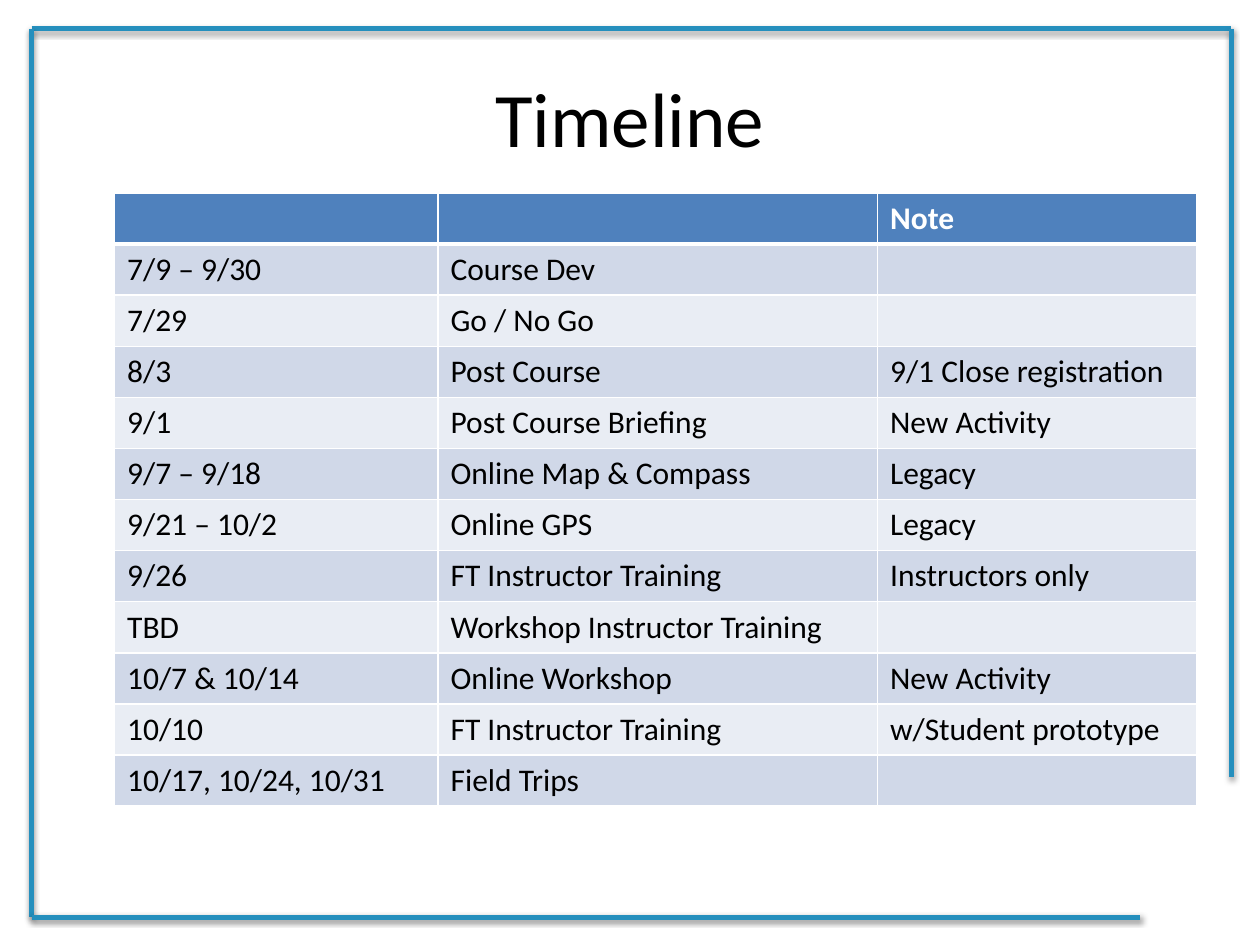
"""Build the course timeline slide."""
import pptx
import pptx.util
import pptx.dml.color
import pptx.enum.shapes
import pptx.enum.text
import pptx.oxml
import pptx.oxml.ns

Cm, Pt = pptx.util.Cm, pptx.util.Pt

TITLE = "Timeline"
ROWS = [
    ("", "", "Note"),
    ("7/9 – 9/30", "Course Dev", ""),
    ("7/29", "Go / No Go", ""),
    ("8/3", "Post Course", "9/1 Close registration"),
    ("9/1", "Post Course Briefing", "New Activity"),
    ("9/7 – 9/18", "Online Map & Compass", "Legacy"),
    ("9/21 – 10/2", "Online GPS", "Legacy"),
    ("9/26", "FT Instructor Training", "Instructors only"),
    ("TBD", "Workshop Instructor Training", ""),
    ("10/7 & 10/14", "Online Workshop", "New Activity"),
    ("10/10", "FT Instructor Training", "w/Student prototype"),
    ("10/17, 10/24, 10/31", "Field Trips", ""),
]
COLORS = {"frame": "258FBD", "head": "4F81BD", "odd": "D0D8E8",
          "even": "E9EDF4", "white": "FFFFFF", "black": "000000"}
FONT = "Calibri"
LEFT, TOP, RIGHT, BASE = 0.64, 0.58, 24.82, 18.49
FRAME = [
    (LEFT, TOP, RIGHT, TOP),
    (RIGHT, TOP, RIGHT, 15.67),
    (LEFT, TOP, LEFT, BASE),
    (LEFT, BASE, 22.99, BASE),
]
WIDTHS = [6.52, 8.86, 6.44]
HIGH = 1.03
NS = pptx.oxml.ns.nsdecls("a")


def color(name):
    return pptx.dml.color.RGBColor.from_string(COLORS[name])


def style(para, size, name, bold=False):
    font = para.font
    font.name, font.size, font.bold = FONT, Pt(size), bold
    font.color.rgb = color(name)


def draw_edge(shapes, ends):
    kind = pptx.enum.shapes.MSO_CONNECTOR.STRAIGHT
    edge = shapes.add_connector(kind, *map(Cm, ends))
    edge.line.color.rgb = color("frame")
    edge.line.width = Pt(3)
    edge._element.spPr.append(pptx.oxml.parse_xml(
        f'<a:effectLst {NS}><a:outerShdw blurRad="{Pt(3.1)}" '
        f'dist="{Pt(1.6)}" dir="5400000" rotWithShape="0">'
        f'<a:srgbClr val="{COLORS["black"]}"><a:alpha val="38000"/>'
        '</a:srgbClr></a:outerShdw></a:effectLst>'))


def set_lines(cell, row):
    props = cell._tc.get_or_add_tcPr()
    thick = {(0, "B"), (1, "T")}
    for side in "LRTB":
        width = Pt(3 if (row, side) in thick else 1)
        props.append(pptx.oxml.parse_xml(
            f'<a:ln{side} {NS} w="{width}"><a:solidFill>'
            f'<a:srgbClr val="{COLORS["white"]}"/>'
            f'</a:solidFill></a:ln{side}>'))


def fill_cell(cell, row, text):
    head = row == 0
    set_lines(cell, row)
    cell.fill.solid()
    cell.fill.fore_color.rgb = color(
        "head" if head else "odd" if row % 2 else "even")
    cell.text = text
    style(cell.text_frame.paragraphs[0], 18,
          "white" if head else "black", head)


def add_grid(shapes):
    grid = shapes.add_table(len(ROWS), len(WIDTHS), Cm(2.31), Cm(3.89),
                            Cm(sum(WIDTHS)), Cm(HIGH * len(ROWS))).table
    for col, width in zip(grid.columns, WIDTHS):
        col.width = Cm(width)
    for r, texts in enumerate(ROWS):
        grid.rows[r].height = Cm(HIGH)
        for c, text in enumerate(texts):
            fill_cell(grid.cell(r, c), r, text)


def main():
    deck = pptx.Presentation()
    deck.slide_width, deck.slide_height = Cm(25.4), Cm(19.05)
    slide = deck.slides.add_slide(deck.slide_layouts[5])
    for ends in FRAME:
        draw_edge(slide.shapes, ends)
    title = slide.shapes.title
    title.left, title.top = Cm(1.27), Cm(0.76)
    title.width, title.height = Cm(22.86), Cm(3.18)
    title.text = TITLE
    title.text_frame.vertical_anchor = pptx.enum.text.MSO_ANCHOR.MIDDLE
    para = title.text_frame.paragraphs[0]
    para.alignment = pptx.enum.text.PP_ALIGN.CENTER
    style(para, 44, "black")
    add_grid(slide.shapes)
    deck.save("out.pptx")


if __name__ == "__main__":
    main()
